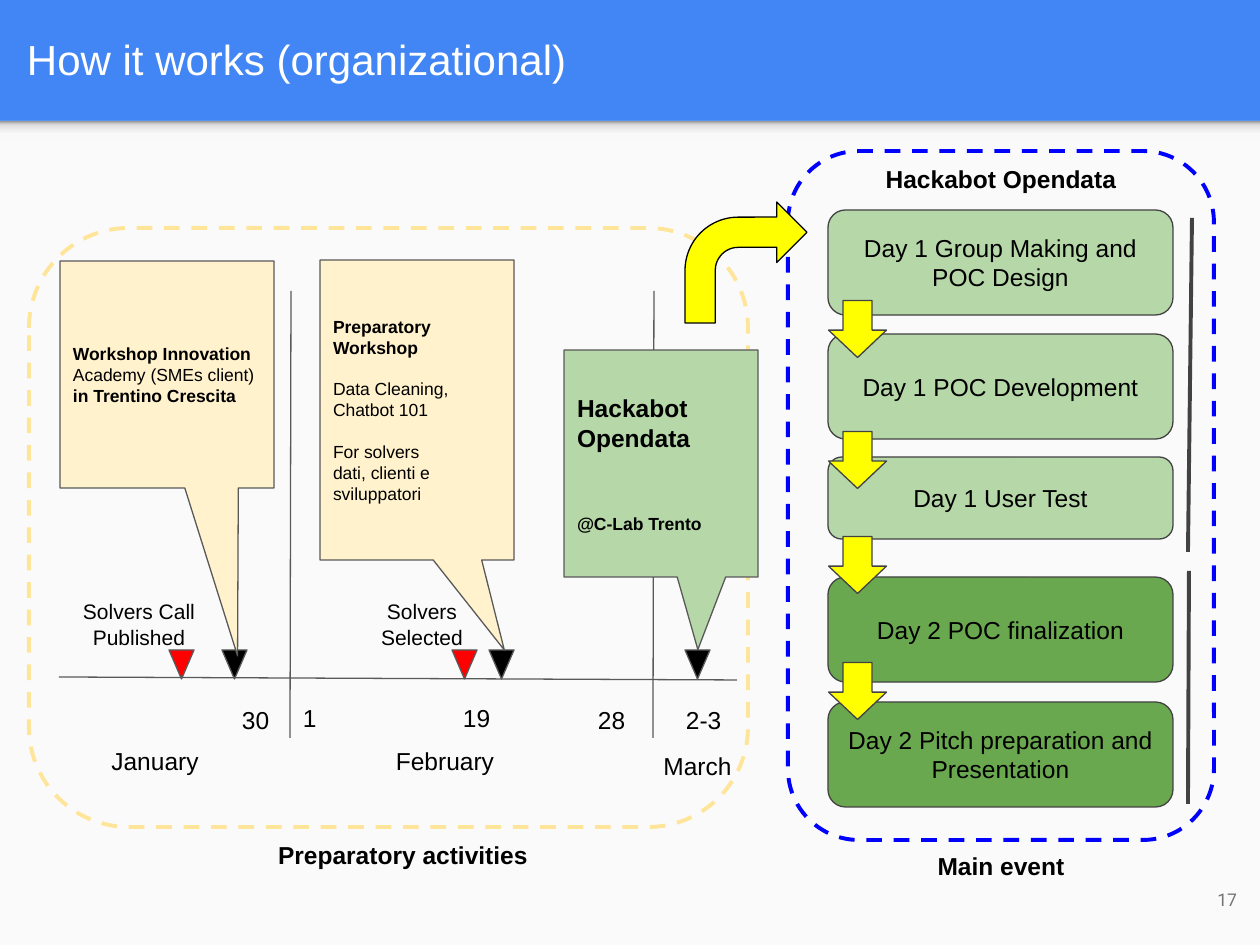
from lxml import etree
from pptx import Presentation
from pptx.dml.color import RGBColor
from pptx.enum.dml import MSO_LINE
from pptx.enum.shapes import MSO_CONNECTOR, MSO_SHAPE
from pptx.enum.text import MSO_ANCHOR, MSO_AUTO_SIZE, PP_ALIGN
from pptx.oxml.ns import qn
from pptx.util import Emu, Pt

STRAIGHT = MSO_CONNECTOR.STRAIGHT
RECT = MSO_SHAPE.RECTANGLE
ROUNDED = MSO_SHAPE.ROUNDED_RECTANGLE
CALLOUT = MSO_SHAPE.RECTANGULAR_CALLOUT
TRIANGLE = MSO_SHAPE.ISOSCELES_TRIANGLE
ARROW = MSO_SHAPE.RIGHT_ARROW
BENT_ARROW = MSO_SHAPE.BENT_ARROW
DASH = MSO_LINE.DASH
TOP, MIDDLE = MSO_ANCHOR.TOP, MSO_ANCHOR.MIDDLE
NO_FIT = MSO_AUTO_SIZE.NONE
LEFT, CENTER, RIGHT = PP_ALIGN.LEFT, PP_ALIGN.CENTER, PP_ALIGN.RIGHT

SCALE = 914400 / 126
INSET = 13

COLORS = {
    "header": "4285F4", "body": "FAFAFA", "white": "FFFFFF", "black": "000000",
    "sand": "FFF2CC", "sand_line": "FFE599", "blue": "0000FF", "red": "FF0000",
    "yellow": "FFFF00", "light_green": "B6D7A8", "green": "6AA84F",
    "grey_line": "595959", "dark_line": "424242", "number": "737373",
    "shade_0": "F9F9F9", "shade_1": "DEDEDE", "shade_2": "999999",
}


def px(n):
    return Emu(round(n * SCALE))


def rgb(name):
    return RGBColor.from_string(COLORS[name])


def format_frame(tf, anchor):
    tf.word_wrap = True
    tf.auto_size = NO_FIT
    tf.vertical_anchor = anchor
    tf.margin_left = tf.margin_right = px(INSET)
    tf.margin_top = tf.margin_bottom = px(INSET)


def format_paragraph(p, size, align, color="black", bold=False, font="Arial"):
    p.alignment = align
    for r in p.runs:
        r.font.name = font
        r.font.size = Pt(size)
        r.font.bold = bold
        r.font.color.rgb = rgb(color)


def write(sp, text, size, align=CENTER, anchor=TOP, **style):
    tf = sp.text_frame
    format_frame(tf, anchor)
    tf.text = text
    for p in tf.paragraphs:
        format_paragraph(p, size, align, **style)


def add_shape(slide, kind, box, fill=None, line=None, width=0.75, adj=(), rotation=0):
    sp = slide.shapes.add_shape(kind, *map(px, box))
    sp.shadow.inherit = False
    sp.rotation = rotation
    for i, value in enumerate(adj):
        sp.adjustments[i] = value
    if fill:
        sp.fill.solid()
        sp.fill.fore_color.rgb = rgb(fill)
    else:
        sp.fill.background()
    if line:
        sp.line.color.rgb = rgb(line)
        sp.line.width = Pt(width)
    else:
        sp.line.fill.background()
    return sp


def add_label(slide, text, box, size=14, **style):
    write(slide.shapes.add_textbox(*map(px, box)), text, size, **style)


def add_line(slide, ends, color="grey_line", width=0.75):
    line = slide.shapes.add_connector(STRAIGHT, *map(px, ends))
    line.line.color.rgb = rgb(color)
    line.line.width = Pt(width)
    etree.SubElement(line._element.spPr, qn("a:effectLst"))


def add_frame(slide, box, color):
    sp = add_shape(slide, ROUNDED, box, line=color, width=2.25)
    sp.line.dash_style = DASH


def add_callout(slide, box, adj, fill, paragraphs):
    sp = add_shape(slide, CALLOUT, box, fill, "grey_line", adj=adj)
    tf = sp.text_frame
    format_frame(tf, MIDDLE)
    for i, (runs, size, gap) in enumerate(paragraphs):
        p = tf.add_paragraph() if i else tf.paragraphs[0]
        if gap:
            p.space_before = Pt(gap)
        for text, _ in runs:
            p.add_run().text = text
        format_paragraph(p, size, LEFT)
        for r, (_, bold) in zip(p.runs, runs):
            r.font.bold = bold


def add_backdrop(slide):
    slide.background.fill.solid()
    slide.background.fill.fore_color.rgb = rgb("header")
    add_shape(slide, RECT, (0, 121, 1260, 824), "body")
    strip = add_shape(slide, RECT, (0, 121, 1260, 20))
    strip.fill.gradient()
    strip.fill.gradient_angle = 90
    stops = strip._element.spPr.find(qn("a:gradFill")).find(qn("a:gsLst"))
    for gs in list(stops):
        stops.remove(gs)
    for pos, color in ((0, "shade_0"), (36, "shade_0"), (80, "shade_1"), (100, "shade_2")):
        gs = etree.SubElement(stops, qn("a:gs"), pos=str(pos * 1000))
        etree.SubElement(gs, qn("a:srgbClr"), val=COLORS[color])


def add_title(slide, text):
    sp = slide.shapes.title
    sp.left, sp.top, sp.width, sp.height = map(px, (14, 3, 1216, 111))
    write(sp, text, 24, LEFT, MIDDLE, color="white")


def add_preparation(slide):
    add_frame(slide, (29, 228, 719, 599), "sand_line")
    for ends in ((59, 677, 737, 680), (291, 291, 290, 738), (654, 291, 653, 738)):
        add_line(slide, ends)
    for x, color in ((222, "black"), (489, "black"), (685, "black"), (169, "red"), (452, "red")):
        add_shape(slide, TRIANGLE, (x, 650, 25, 29), color, "grey_line", rotation=180)

    add_callout(slide, (60, 261, 214, 227), (0.33, 1.24), "sand", [
        ([("Workshop Innovation", True), (" Academy (SMEs client) ", False),
          ("in Trentino Crescita", True)], 10, 0)])
    add_callout(slide, (320, 260, 194, 300), (0.45, 0.8), "sand", [
        ([("Preparatory", True)], 10, 0),
        ([("Workshop", True)], 10, 0),
        ([("Data Cleaning, Chatbot 101", False)], 10, 11.5),
        ([("For solvers", False)], 10, 11.5),
        ([("dati, clienti e sviluppatori", False)], 10, 0)])
    add_callout(slide, (564, 350, 194, 227), (0.19, 0.82), "light_green", [
        ([("Hackabot", True)], 14, 0),
        ([("Opendata", True)], 14, 0),
        ([("@C-Lab Trento", True)], 10, 34.5)])

    for text, x, y, w in (("30", 229, 692, 91), ("1", 290, 690, 76), ("19", 450, 690, 63),
                          ("28", 585, 692, 91), ("2-3", 673, 692, 63)):
        add_label(slide, text, (x, y, w, 48), align=LEFT)
    for text, x, y, w in (("January", 44, 733, 222), ("February", 334, 733, 222),
                          ("March", 625, 738, 145)):
        add_label(slide, text, (x, y, w, 60))
    for text, x in (("Solvers Call\nPublished", 3), ("Solvers\nSelected", 286)):
        add_label(slide, text, (x, 586, 272, 60), size=12)


def add_main_event(slide):
    add_frame(slide, (788, 151, 426, 689), "blue")
    for text, y, h, fill in (
            ("Day 1 Group Making and POC Design", 210, 105, "light_green"),
            ("Day 1 POC Development", 334, 105, "light_green"),
            ("Day 1 User Test", 457, 82, "light_green"),
            ("Day 2 POC finalization", 577, 105, "green"),
            ("Day 2 Pitch preparation and Presentation", 702, 105, "green")):
        sp = add_shape(slide, ROUNDED, (828, y, 345, h), fill, "dark_line")
        write(sp, text, 14, anchor=MIDDLE)
    for y in (300, 431, 536, 662):
        add_shape(slide, ARROW, (829, y, 57, 58), "yellow", "dark_line",
                  adj=(0.5, 0.48), rotation=90)
    add_shape(slide, BENT_ARROW, (685, 202, 122, 121), "yellow", "black",
              adj=(0.25, 0.25, 0.25, 0.44))
    for ends in ((1192, 218, 1188, 552), (1189, 571, 1188, 804)):
        add_line(slide, ends, "dark_line", 2.25)


def main():
    prs = Presentation()
    prs.slide_width, prs.slide_height = px(1260), px(945)
    slide = prs.slides.add_slide(prs.slide_layouts[5])
    add_backdrop(slide)
    add_title(slide, "How it works (organizational)")
    add_preparation(slide)
    add_main_event(slide)
    for text, x, y in (("Hackabot Opendata", 858, 151), ("Main event", 858, 838),
                       ("Preparatory activities", 260, 827)):
        add_label(slide, text, (x, y, 286, 48), bold=True)
    add_label(slide, "17", (1174, 863, 76, 72), size=10, align=RIGHT,
              anchor=MIDDLE, color="number", font="Roboto")
    prs.save("out.pptx")


if __name__ == "__main__":
    main()
